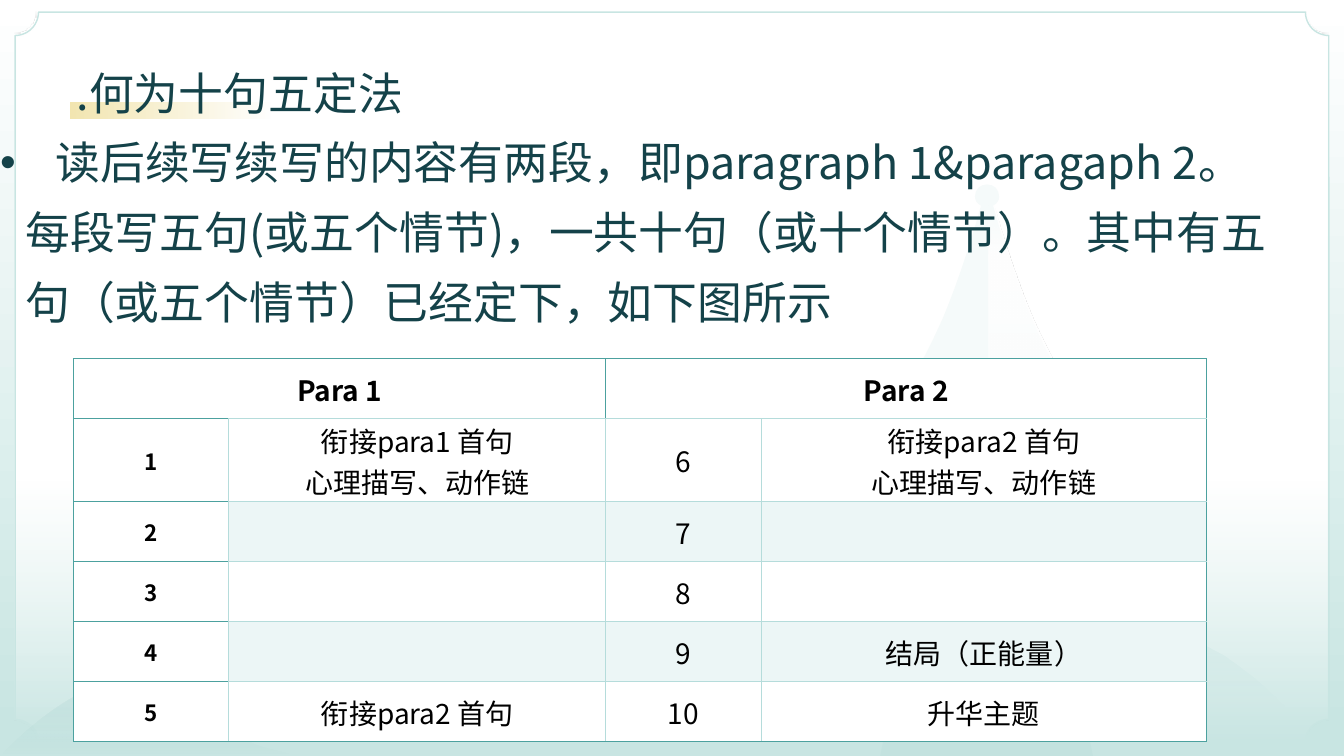
from lxml import etree
from pptx import Presentation
from pptx.dml.color import RGBColor
from pptx.enum.shapes import MSO_SHAPE
from pptx.enum.text import MSO_ANCHOR, PP_ALIGN
from pptx.oxml.ns import qn
from pptx.util import Inches, Pt

RECT, PLAQUE = MSO_SHAPE.RECTANGLE, MSO_SHAPE.PLAQUE
TRAPEZOID, ROUNDED = MSO_SHAPE.TRAPEZOID, MSO_SHAPE.ROUNDED_RECTANGLE
LEFT, CENTER = PP_ALIGN.LEFT, PP_ALIGN.CENTER
MIDDLE, BOTTOM, TOP = MSO_ANCHOR.MIDDLE, MSO_ANCHOR.BOTTOM, MSO_ANCHOR.TOP
FONT = "Noto Sans CJK SC"
SPACER_FONT = "Noto Sans CJK JP"
COLORS = {
    "white": "FFFFFF", "black": "000000", "ink": "144249", "teal": "4CA19F",
    "mist": "B5DCDB", "pale": "C8E5E2", "band": "ECF6F6", "gold": "E6CC60",
    "back": "E8F4F3",
}


def rgb(name):
    return RGBColor.from_string(COLORS[name])


def add_color(parent, name, opacity=100):
    clr = etree.SubElement(parent, qn("a:srgbClr"), val=COLORS[name])
    if opacity < 100:
        etree.SubElement(clr, qn("a:alpha"), val=str(opacity * 1000))


def paint(sp, stops, angle=90, line=None):
    sp.shadow.inherit = False
    sp.fill.background()
    if line:
        sp.line.color.rgb = rgb(line)
        sp.line.width = Pt(1)
    else:
        sp.line.fill.background()
    old = sp._element.spPr.find(qn("a:noFill"))
    if len(stops) == 1:
        fill = etree.Element(qn("a:solidFill"))
        add_color(fill, *stops[0][1:])
    else:
        fill = etree.Element(qn("a:gradFill"), rotWithShape="1")
        gs_list = etree.SubElement(fill, qn("a:gsLst"))
        for pos, *color in stops:
            add_color(etree.SubElement(gs_list, qn("a:gs"), pos=str(pos * 1000)), *color)
        etree.SubElement(fill, qn("a:lin"), ang=str(angle * 60000), scaled="0")
    old.getparent().replace(old, fill)


def add_preset(s, kind, box, stops, adj=None, **fmt):
    sp = s.shapes.add_shape(kind, *map(Inches, box))
    if adj is not None:
        sp.adjustments[0] = adj
    paint(sp, stops, **fmt)


def add_curves(s, left, top, points, stops):
    emu = [(Inches(left + x), Inches(top + y)) for x, y in points]
    fb = s.shapes.build_freeform(*emu[0], scale=1.0)
    fb.add_line_segments(emu[1:], close=True)
    sp = fb.convert_to_shape()
    lines = list(sp._element.iter(qn("a:lnTo")))
    for i in range(0, len(lines) - 2, 3):
        bezier = etree.Element(qn("a:cubicBezTo"))
        lines[i].addprevious(bezier)
        for line in lines[i:i + 3]:
            bezier.append(line[0])
            line.getparent().remove(line)
    paint(sp, stops)


def add_text(p, text, size=20, color="black", bold=False, font=FONT):
    r = p.add_run()
    r.text = text
    r.font.size, r.font.bold, r.font.name = Pt(size), bold, font
    r.font.color.rgb = rgb(color)
    etree.SubElement(r._r.get_or_add_rPr(), qn("a:ea"), typeface=font)


def prepare_frame(tf, anchor):
    tf.margin_left = tf.margin_right = tf.margin_top = tf.margin_bottom = 0
    tf.word_wrap = True
    tf.vertical_anchor = anchor


def draw_frame(s, x, y, w, h):
    add_preset(s, RECT, (x, y, w, h), [(0, "white"), (97, "pale")])
    add_preset(s, PLAQUE, (x + 0.15, y + 0.12, w - 0.3, h - 0.25),
               [(64, "white"), (100, "white", 0)], adj=0.032, line="pale")
    add_preset(s, RECT, (x + 0.7, y + 1.02, 2, 0.16),
               [(0, "gold", 0), (100, "gold", 50)], angle=180)


def draw_hills(s, x, y):
    right = [(4.18, 0.68),
             (4.18, 0.68), (3.54, 0.01), (3.1, 0), (2.65, -0.01), (2.31, 0.31), (2.18, 0.41),
             (2.1, 0.47), (2.05, 0.52), (1.81, 0.39), (1.58, 0.26), (1.29, 0.27), (0.79, 0.49),
             (0.39, 0.65), (0, 0.68), (0, 0.68)]
    middle = [(4.55, 0.63),
              (4.55, 0.63), (4.06, 0.01), (3.72, 0), (3.38, -0.01), (3.12, 0.28), (3.01, 0.38),
              (2.95, 0.43), (2.92, 0.48), (2.58, 0.36), (2.39, 0.29), (2.2, 0.36), (2.07, 0.45),
              (1.96, 0.52), (1.58, 0.48), (1.4, 0.36), (1.21, 0.24), (0.99, 0.25), (0.6, 0.45),
              (0.3, 0.6), (0, 0.63), (0, 0.63)]
    left = [(2.98, 0.73),
            (2.98, 0.73), (2.64, 0.66), (2.52, 0.61), (2.4, 0.55), (2.25, 0.47), (2.08, 0.49),
            (1.94, 0.51), (1.55, 0.01), (1.18, 0), (0.8, 0), (0.27, 0.44), (0, 0.73)]
    add_curves(s, x + 8.58, y + 6.34, right, [(0, "mist", 20), (100, "mist", 0)])
    add_curves(s, x + 3.19, y + 6.39, middle, [(0, "mist", 30), (100, "mist", 0)])
    add_curves(s, x, y + 6.77, left, [(0, "teal", 10), (99, "teal", 0)])


def draw_tower(s, x, y):
    knob = [(0, 0), (0.07, 0), (0.12, 0.05), (0.12, 0.12), (0.12, 0.16), (0.1, 0.19)]
    side = [(0.06, 0.21),
            (0.13, 0.46), (0.26, 0.9), (0.44, 1.33), (0.63, 1.75), (0.84, 2.18), (1.2, 2.39),
            (1.05, 2.7), (0.9, 3.2), (0.74, 3.83)]
    half = knob + side
    mirrored = [(-px, py) for px, py in reversed(half)]
    foot, neck = (0, 3.83), (0, 0.21)
    add_curves(s, x, y, half + [half[-1], mirrored[0]] + mirrored, [(0, "teal", 5)])
    add_curves(s, x + 0.02, y, side + [side[-1], foot, foot, foot, neck, neck],
               [(0, "white", 0), (14, "white"), (97, "white", 0)])
    add_preset(s, TRAPEZOID, (x - 1.06, y + 3.99, 2.11, 1.68), [(0, "teal", 4)], adj=0.202)
    add_preset(s, ROUNDED, (x - 0.84, y + 3.83, 1.66, 0.17), [(0, "teal", 10)], adj=0.5)


def write_title(s, x, y, w, h):
    sp = s.shapes.title
    sp.left, sp.top, sp.width, sp.height = map(Inches, (x, y, w, h))
    s.shapes._spTree.append(sp._element)
    prepare_frame(sp.text_frame, BOTTOM)
    p = sp.text_frame.paragraphs[0]
    p.alignment = LEFT
    p.line_spacing = 1.0
    add_text(p, ".何为十句五定法", size=32, color="ink")


def write_body(s, x, y, w, h):
    tf = s.shapes.add_textbox(*map(Inches, (x, y, w, h))).text_frame
    prepare_frame(tf, TOP)
    p = tf.paragraphs[0]
    p.line_spacing = 1.3
    p.space_before = Pt(10)
    pPr = p._p.get_or_add_pPr()
    pPr.set("marL", str(Inches(0.25)))
    pPr.set("indent", str(-Inches(0.25)))
    etree.SubElement(pPr, qn("a:buFont"), typeface="Arial")
    etree.SubElement(pPr, qn("a:buChar"), char="•")
    add_text(p, "   ", size=32, color="ink", font=SPACER_FONT)
    add_text(p, "读后续写续写的内容有两段，即paragraph 1&paragaph 2。每段写五句(或五个情节)，"
             "一共十句（或十个情节）。其中有五句（或五个情节）已经定下，如下图所示",
             size=32, color="ink")


def set_borders(cell, **edges):
    tcPr = cell._tc.get_or_add_tcPr()
    for i, side in enumerate("LRTB"):
        ln = etree.Element(qn("a:ln" + side), w=str(Pt(0.75)))
        add_color(etree.SubElement(ln, qn("a:solidFill")), edges[side])
        tcPr.insert(i, ln)


def draw_plan(s, x, y, w, h):
    rows = [
        ("Para 1", "", "Para 2", ""),
        ("1", "衔接para1 首句\n心理描写、动作链", "6", "衔接para2 首句\n心理描写、动作链"),
        ("2", "", "7", ""),
        ("3", "", "8", ""),
        ("4", "", "9", "结局（正能量）"),
        ("5", "衔接para2 首句", "10", "升华主题"),
    ]
    last = len(rows) - 1
    table = s.shapes.add_table(len(rows), 4, *map(Inches, (x, y, w, h))).table
    table.first_row = table.horz_banding = False
    for col, width in zip(table.columns, (1.54, 3.74, 1.54, 4.42)):
        col.width = Inches(width)
    for c in (0, 2):
        table.cell(0, c).merge(table.cell(0, c + 1))
    for r, row in enumerate(rows):
        table.rows[r].height = Inches(0.82 if r == 1 else 0.595)
        for c, text in enumerate(row):
            cell = table.cell(r, c)
            cell.margin_left = cell.margin_right = cell.margin_top = Inches(0.01)
            cell.margin_bottom = 0
            cell.vertical_anchor = MIDDLE
            cell.fill.solid()
            cell.fill.fore_color.rgb = rgb("band" if c and r in (2, 4) else "white")
            tf = cell.text_frame
            for i, line in enumerate(text.split("\n")):
                p = tf.add_paragraph() if i else tf.paragraphs[0]
                p.alignment = CENTER
                if line:
                    add_text(p, line, size=16 if r and c == 0 else 20,
                             bold=r == 0 or c == 0)
            set_borders(cell,
                        L="teal" if c == 0 or (r == 0 and c == 2) else "mist",
                        R="teal" if c == 3 or r == 0 else "mist",
                        T="teal" if r == 0 or c == 0 else "mist",
                        B="teal" if r == last or (r and c == 0) else "mist")


def main():
    prs = Presentation()
    prs.slide_width, prs.slide_height = Inches(13.33), Inches(7.5)
    s = prs.slides.add_slide(prs.slide_layouts[5])
    s.background.fill.solid()
    s.background.fill.fore_color.rgb = rgb("back")
    draw_frame(s, 0, 0, 13.33, 7.5)
    draw_hills(s, 0, 0)
    draw_tower(s, 9.79, 1.83)
    write_title(s, 0.76, 0.4, 11.81, 0.79)
    write_body(s, 0, 1.18, 12.69, 5.26)
    draw_plan(s, 0.73, 3.56, 11.24, 3.8)
    prs.save("out.pptx")


if __name__ == "__main__":
    main()
